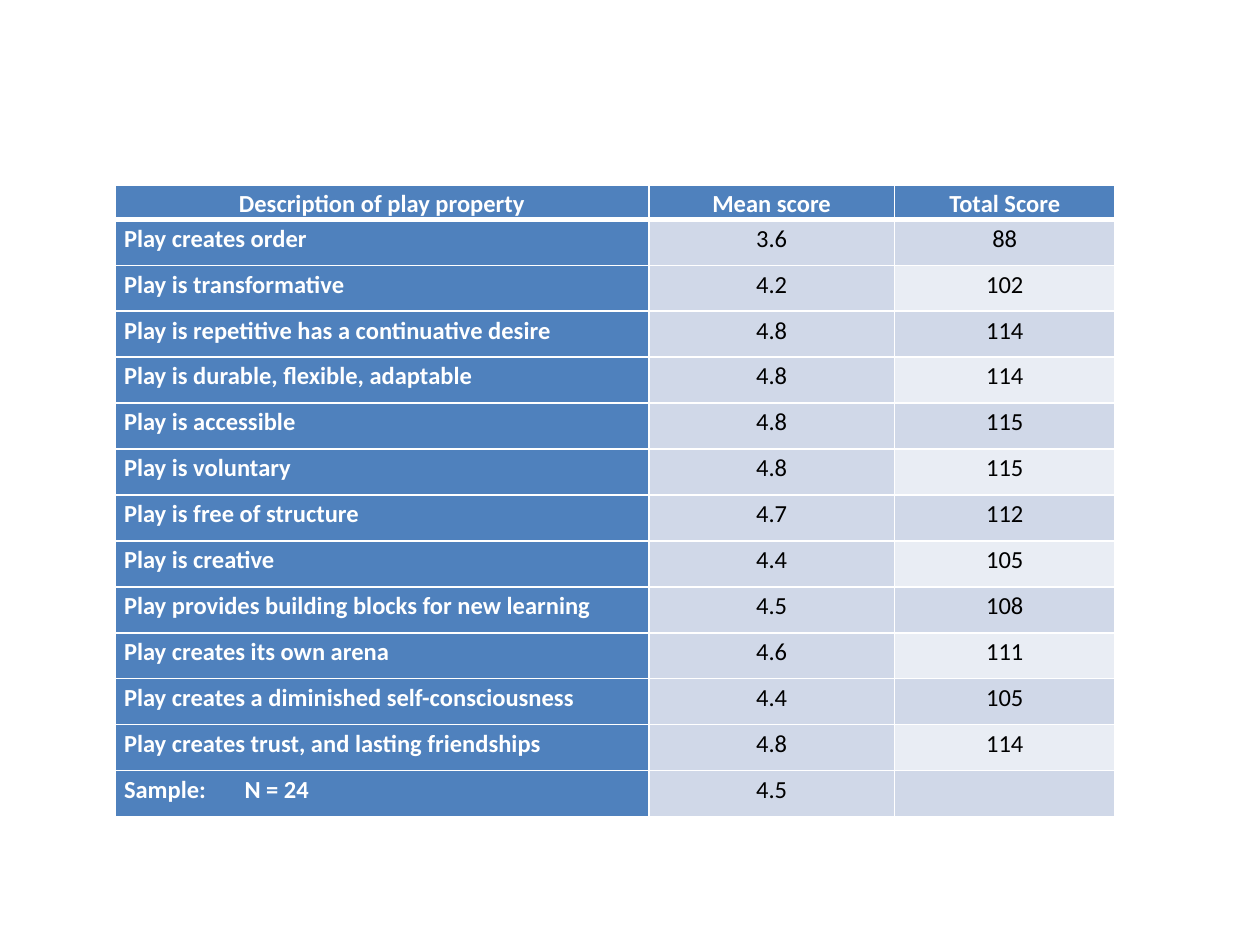
from lxml import etree
from pptx import Presentation
from pptx import util as u
from pptx.dml.color import RGBColor
from pptx.enum import text
from pptx.oxml.ns import qn

HEADINGS = ("Description of play property", "Mean score", "Total Score")
SCORES = [
    ("Play creates order", "3.6", "88"),
    ("Play is transformative", "4.2", "102"),
    ("Play is repetitive has a continuative desire", "4.8", "114"),
    ("Play is durable, flexible, adaptable", "4.8", "114"),
    ("Play is accessible", "4.8", "115"),
    ("Play is voluntary", "4.8", "115"),
    ("Play is free of structure", "4.7", "112"),
    ("Play is creative", "4.4", "105"),
    ("Play provides building blocks for new learning", "4.5", "108"),
    ("Play creates its own arena", "4.6", "111"),
    ("Play creates a diminished self-consciousness", "4.4", "105"),
    ("Play creates trust, and lasting friendships", "4.8", "114"),
    ("Sample:\tN = 24", "4.5", ""),
]
COLUMN_WIDTHS = [u.Cm(10.76), u.Cm(4.95), u.Cm(4.45)]
HEADER_HEIGHT = u.Cm(0.69)
TABLE_HEIGHT = u.Cm(12.73)
SAMPLE_TAB = u.Cm(2.43)

BLUE, BAND, LIGHT_BAND = "4F81BD", "D0D8E8", "E9EDF4"
WHITE, BLACK = "FFFFFF", "000000"
CELL_FORMAT = {
    "margin_left": u.Cm(0.18),
    "margin_right": u.Cm(0.18),
    "margin_top": 0,
    "margin_bottom": 0,
    "vertical_anchor": text.MSO_ANCHOR.TOP,
}


def color(value):
    return RGBColor.from_string(value)


def apply_format(target, values):
    for attribute, value in values.items():
        setattr(target, attribute, value)


def add_borders(cell, widths):
    """Draw white borders; widths gives points by side (L, R, T, B)."""
    properties = cell._tc.get_or_add_tcPr()
    for side, width in widths.items():
        line = etree.SubElement(properties, qn(f"a:ln{side}"), w=str(u.Pt(width)))
        fill = etree.SubElement(line, qn("a:solidFill"))
        etree.SubElement(fill, qn("a:srgbClr"), val=WHITE)


def add_tab_stop(paragraph, position):
    stops = etree.SubElement(paragraph._p.get_or_add_pPr(), qn("a:tabLst"))
    etree.SubElement(stops, qn("a:tab"), pos=str(position), algn="l")


def write_text(cell, wording, is_heading, is_centred):
    paragraph = cell.text_frame.paragraphs[0]
    paragraph.line_spacing = 1.15
    paragraph.alignment = text.PP_ALIGN.CENTER if is_centred else text.PP_ALIGN.LEFT
    if "\t" in wording:
        add_tab_stop(paragraph, SAMPLE_TAB)
    font_format = {"name": "Calibri", "size": u.Pt(14), "bold": is_heading}
    if wording:
        run = paragraph.add_run()
        run.text = wording
        apply_format(run.font, font_format)
        run.font.color.rgb = color(WHITE if is_heading else BLACK)
    else:
        apply_format(paragraph.font, font_format)


def fill_color(row, column):
    """Bands alternate in the last column only."""
    if row == 0 or column == 0:
        return BLUE
    return LIGHT_BAND if column == 2 and row % 2 == 0 else BAND


def format_cell(cell, row, column, wording):
    apply_format(cell, CELL_FORMAT)
    add_borders(cell, {"L": 1, "R": 1, "T": 3 if row == 1 else 1, "B": 3 if row == 0 else 1})
    cell.fill.solid()
    cell.fill.fore_color.rgb = color(fill_color(row, column))
    write_text(cell, wording, row == 0 or column == 0, row == 0 or column > 0)


def add_score_table(slide):
    records = [HEADINGS, *SCORES]
    table = slide.shapes.add_table(
        len(records), len(HEADINGS), u.Cm(2.32), u.Cm(3.73), sum(COLUMN_WIDTHS), TABLE_HEIGHT
    ).table
    for column, width in zip(table.columns, COLUMN_WIDTHS):
        column.width = width
    score_height = (TABLE_HEIGHT - HEADER_HEIGHT) // len(SCORES)
    for row, record in enumerate(records):
        table.rows[row].height = score_height if row else HEADER_HEIGHT
        for column, wording in enumerate(record):
            format_cell(table.cell(row, column), row, column, wording)


def main():
    presentation = Presentation()
    apply_format(presentation, {"slide_width": u.Cm(25.4), "slide_height": u.Cm(19.05)})
    slide = presentation.slides.add_slide(presentation.slide_layouts[6])
    add_score_table(slide)
    presentation.save("out.pptx")


if __name__ == "__main__":
    main()
